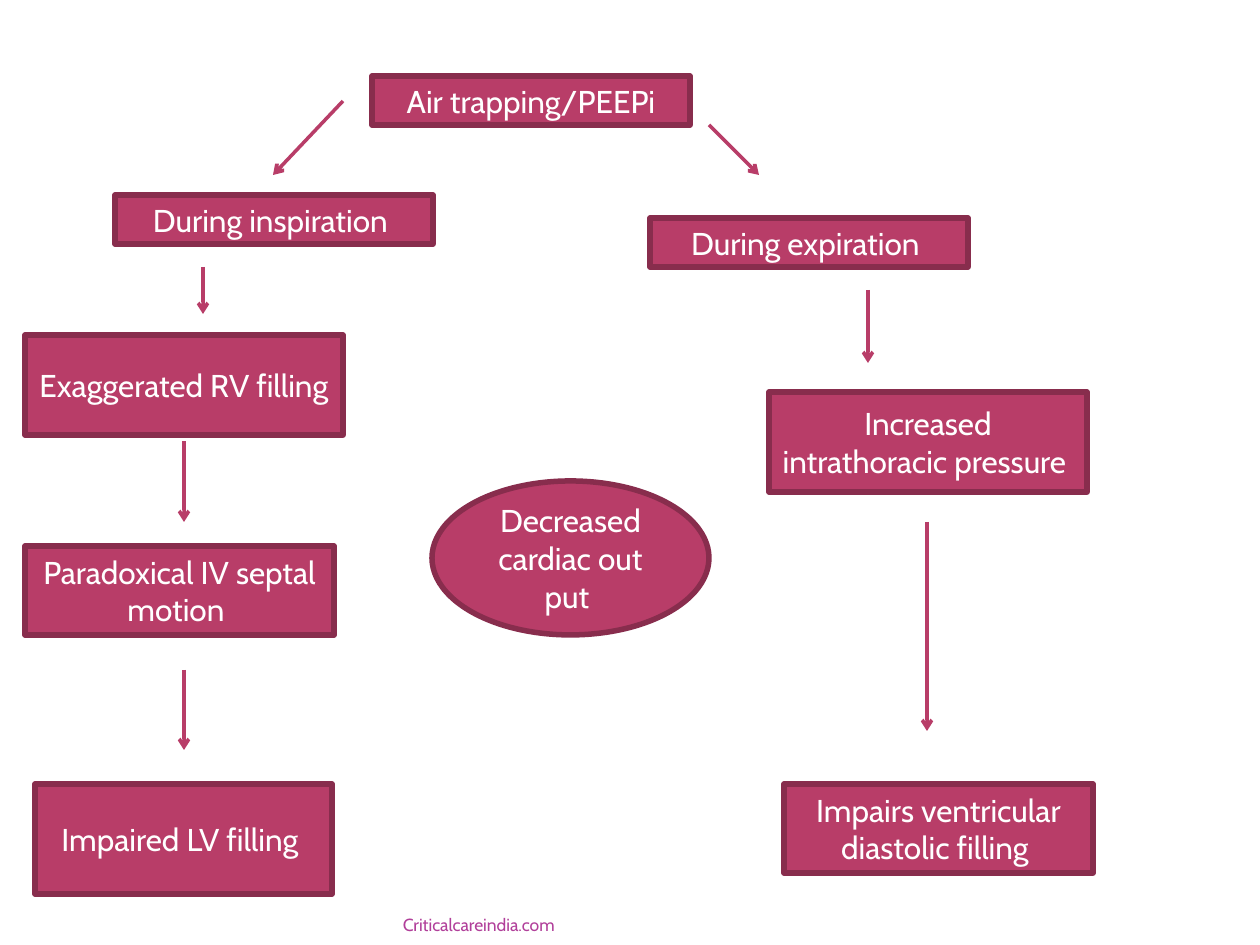
from dataclasses import dataclass

from lxml import etree
from pptx import Presentation
from pptx import util as u
from pptx.dml.color import RGBColor
from pptx.enum import shapes, text
from pptx.oxml import ns

PX = u.Inches(1) / 126


def px(*lengths):
    return [round(length * PX) for length in lengths]


@dataclass(frozen=True)
class Theme:
    font: str = "Cabin"
    fill: RGBColor = RGBColor(0xB8, 0x3D, 0x68)
    border: RGBColor = RGBColor(0x88, 0x2D, 0x4D)
    label: RGBColor = RGBColor(0xFF, 0xFF, 0xFF)
    credit: RGBColor = RGBColor(0xB1, 0x3F, 0x9A)
    label_size: int = 18
    credit_size: int = 10
    border_width: float = 3.15
    arrow_width: int = 2


class FlowSlide:
    def __init__(self, slide, theme):
        self.slide = slide
        self.theme = theme

    def add_wording(self, frame, wording, size, color, align, anchor):
        frame.word_wrap = True
        frame.vertical_anchor = anchor
        paragraph = frame.paragraphs[0]
        paragraph.alignment = align
        run = paragraph.add_run()
        run.text = wording
        run.font.name = self.theme.font
        run.font.size = u.Pt(size)
        run.font.color.rgb = color

    def node(self, wording, left, top, width, height,
             outline=shapes.MSO_SHAPE.RECTANGLE):
        """Add one labelled step of the flow chart."""
        step = self.slide.shapes.add_shape(outline, *px(left, top, width, height))
        step.shadow.inherit = False
        step.fill.solid()
        step.fill.fore_color.rgb = self.theme.fill
        step.line.color.rgb = self.theme.border
        step.line.width = u.Pt(self.theme.border_width)
        self.add_wording(step.text_frame, wording, self.theme.label_size,
                         self.theme.label, text.PP_ALIGN.CENTER,
                         text.MSO_ANCHOR.MIDDLE)

    def arrow(self, x1, y1, x2, y2):
        link = self.slide.shapes.add_connector(
            shapes.MSO_CONNECTOR.STRAIGHT, *px(x1, y1, x2, y2))
        link.line.color.rgb = self.theme.fill
        link.line.width = u.Pt(self.theme.arrow_width)
        properties = link._element.spPr
        etree.SubElement(properties.find(ns.qn("a:ln")), ns.qn("a:tailEnd"),
                         type="arrow")
        etree.SubElement(properties, ns.qn("a:effectLst"))

    def footer(self, wording, left, top, width, height):
        frame = self.slide.shapes.add_textbox(*px(left, top, width, height)).text_frame
        frame.margin_top = frame.margin_bottom = 0
        self.add_wording(frame, wording, self.theme.credit_size, self.theme.credit,
                         text.PP_ALIGN.RIGHT, text.MSO_ANCHOR.BOTTOM)


STEPS = [
    ("Air trapping/PEEPi", 372, 76, 318, 49),
    ("During inspiration ", 115, 195, 318, 49),
    ("Exaggerated RV filling ", 25, 335, 318, 100),
    ("Paradoxical IV septal motion ", 25, 546, 309, 89),
    ("Impaired LV filling ", 35, 784, 297, 110),
    ("During expiration ", 650, 218, 318, 49),
    ("Increased intrathoracic pressure ", 769, 392, 318, 100),
    ("Impairs ventricular diastolic filling ", 784, 784, 309, 89),
]

ARROWS = [
    (343, 101, 273, 175),
    (203, 267, 203, 314),
    (184, 441, 184, 522),
    (184, 670, 184, 750),
    (709, 125, 759, 175),
    (868, 290, 868, 363),
    (927, 522, 927, 731),
]


def main():
    deck = Presentation()
    deck.slide_width, deck.slide_height = px(1260, 945)
    flow = FlowSlide(deck.slides.add_slide(deck.slide_layouts[6]), Theme())
    for step in STEPS:
        flow.node(*step)
    for arrow in ARROWS:
        flow.arrow(*arrow)
    flow.node("Decreased cardiac out put ", 432, 481, 277, 154,
              shapes.MSO_SHAPE.OVAL)
    flow.footer("Criticalcareindia.com", 63, 903, 504, 32)
    deck.save("out.pptx")


if __name__ == "__main__":
    main()
